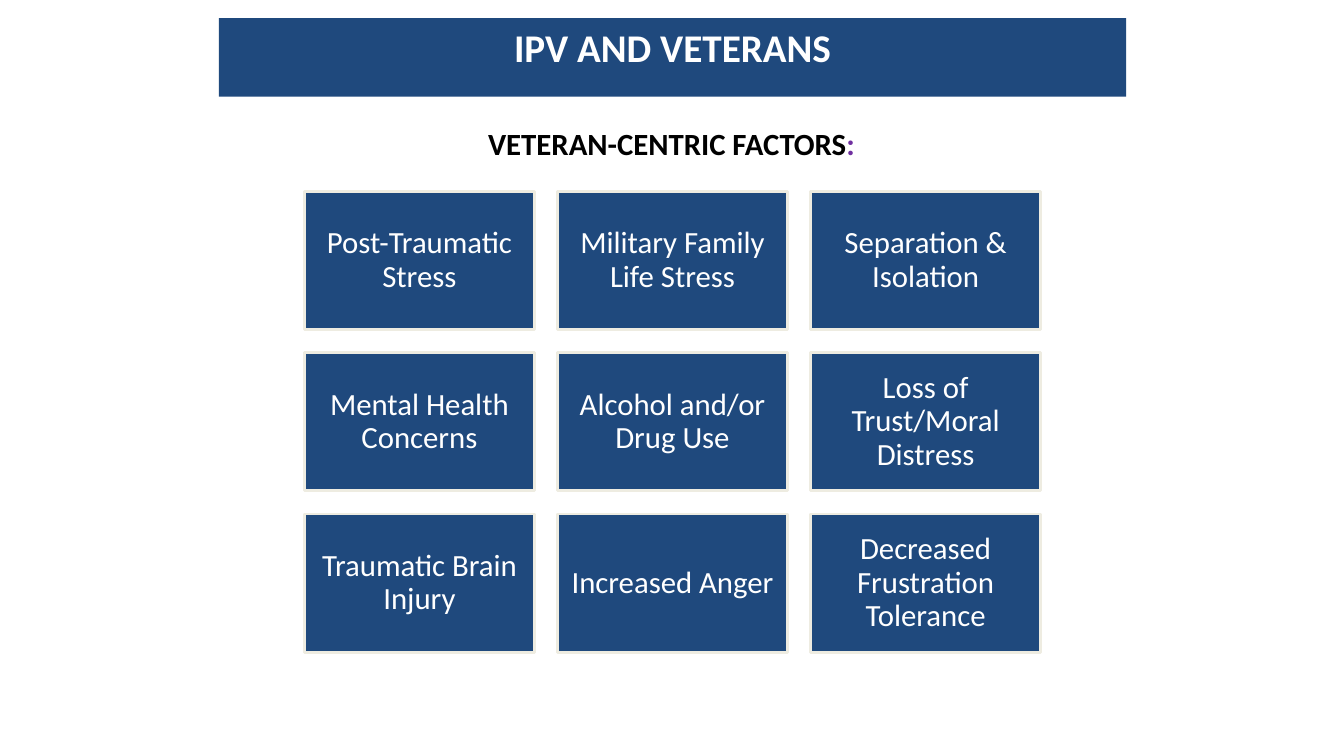
from pptx import Presentation
from pptx.dml.color import RGBColor
from pptx.enum.shapes import MSO_SHAPE
from pptx.enum.text import MSO_ANCHOR, PP_ALIGN
from pptx.util import Inches, Pt

RECT = MSO_SHAPE.RECTANGLE
TOP, MIDDLE = MSO_ANCHOR.TOP, MSO_ANCHOR.MIDDLE
CENTER = PP_ALIGN.CENTER

NAVY = RGBColor(0x1F, 0x49, 0x7D)
CREAM = RGBColor(0xEE, 0xEC, 0xE1)
WHITE = RGBColor(0xFF, 0xFF, 0xFF)
BLACK = RGBColor(0x00, 0x00, 0x00)
PURPLE = RGBColor(0x70, 0x30, 0xA0)
FONT = "Calibri"

# Content
TITLE = "IPV AND VETERANS"
SUBTITLE = [("VETERAN-CENTRIC FACTORS", BLACK), (":", PURPLE)]
FACTORS = [
    ["Post-Traumatic Stress", "Military Family Life Stress", "Separation & Isolation"],
    ["Mental Health Concerns", "Alcohol and/or Drug Use", "Loss of Trust/Moral Distress"],
    ["Traumatic Brain Injury", "Increased Anger", "Decreased Frustration Tolerance"],
]

# Grid, in inches
GRID_LEFT, GRID_TOP = 3.02, 1.9
TILE_W, TILE_H = 2.28, 1.37
GAP = 0.23

prs = Presentation()
prs.slide_width, prs.slide_height = Inches(13.33), Inches(7.5)
slide = prs.slides.add_slide(prs.slide_layouts[6])


def write(sp, runs, size=22, bold=False, anchor=TOP, spacing=1.0, inset=None):
    """Fill a shape with one centred paragraph of (text, colour) runs."""
    tf = sp.text_frame
    tf.word_wrap = True
    tf.vertical_anchor = anchor
    if inset is not None:
        tf.margin_left = tf.margin_right = Inches(inset)
        tf.margin_top = tf.margin_bottom = Inches(inset)
    p = tf.paragraphs[0]
    p.alignment = CENTER
    p.line_spacing = spacing
    for text, color in runs:
        r = p.add_run()
        r.text = text
        r.font.name = FONT
        r.font.size = Pt(size)
        r.font.bold = bold
        r.font.color.rgb = color


def add_box(left, top, width, height, line=None):
    sp = slide.shapes.add_shape(RECT, Inches(left), Inches(top), Inches(width), Inches(height))
    sp.shadow.inherit = False
    sp.fill.solid()
    sp.fill.fore_color.rgb = NAVY
    if line is None:
        sp.line.fill.background()
    else:
        sp.line.color.rgb = line
        sp.line.width = Pt(2)
    return sp


# Title bar and subtitle
write(add_box(2.17, 0.18, 9, 0.78), [(TITLE, WHITE)], size=28, bold=True)
subtitle = slide.shapes.add_textbox(Inches(4.43), Inches(1.19), Inches(4.46), Inches(0.47))
write(subtitle, SUBTITLE, bold=True)

# Factor tiles
for row, factors in enumerate(FACTORS):
    for col, factor in enumerate(factors):
        tile = add_box(GRID_LEFT + col * (TILE_W + GAP), GRID_TOP + row * (TILE_H + GAP),
                       TILE_W, TILE_H, line=CREAM)
        write(tile, [(factor, WHITE)], anchor=MIDDLE, spacing=0.9, inset=0.09)

prs.save("out.pptx")
